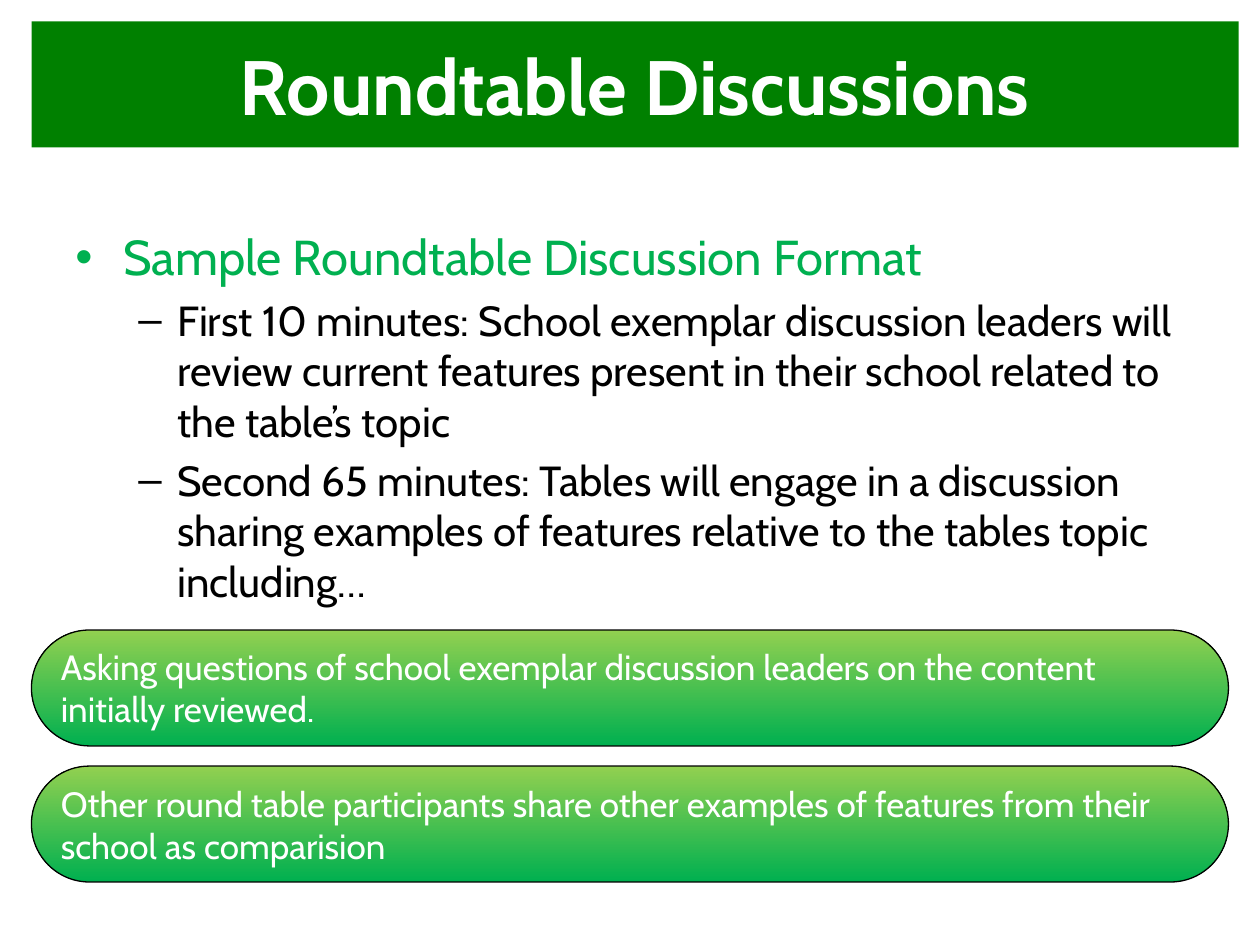
from dataclasses import dataclass

from lxml.etree import SubElement
from pptx import Presentation
from pptx.dml.color import RGBColor
from pptx.enum.shapes import MSO_SHAPE as Preset
from pptx.enum.text import MSO_ANCHOR as Anchor, PP_ALIGN as Align
from pptx.oxml.ns import qn
from pptx.util import Inches, Pt

WHITE = RGBColor(0xFF, 0xFF, 0xFF)
BLACK = RGBColor(0x00, 0x00, 0x00)
BANNER_GREEN = RGBColor(0x00, 0x80, 0x00)
GREEN = RGBColor(0x00, 0xB0, 0x50)
LIME = RGBColor(0x92, 0xD0, 0x50)

TITLE = {"name": "Cabin", "size": Pt(44), "bold": True}
HEADING = {"name": "Cabin", "size": Pt(28)}
DETAIL = {"name": "Cabin", "size": Pt(24)}
PROMPT = {"name": "Cabin", "size": Pt(20)}


@dataclass
class Bullet:
    text: str
    symbol: str
    level: int
    margin: float
    hanging: float
    style: dict
    color: RGBColor


def detail(text: str) -> Bullet:
    return Bullet(text, "–", 1, 0.81, 0.31, DETAIL, BLACK)


BULLETS = [
    Bullet("Sample Roundtable Discussion Format", "•", 0, 0.38, 0.38, HEADING, GREEN),
    detail("First 10 minutes: School exemplar discussion leaders will review current "
           "features present in their school related to the table’s topic"),
    detail("Second 65 minutes: Tables will engage in a discussion sharing examples of "
           "features relative to the tables topic including…"),
]
PROMPTS = [
    "Asking questions of school exemplar discussion leaders on the content initially reviewed.",
    "Other round table participants share other examples of features from their school "
    "as comparision",
]
PROMPT_TOP, PROMPT_STEP = 5, 1.08


def write(para, text: str, style: dict, color: RGBColor) -> None:
    span = para.add_run()
    span.text = text
    for key, value in style.items():
        setattr(span.font, key, value)
    span.font.color.rgb = color


def add_panel(page, preset: Preset, left: float, top: float, width: float,
              height: float, text: str, style: dict, align: Align):
    panel = page.shapes.add_shape(
        preset, Inches(left), Inches(top), Inches(width), Inches(height))
    panel.shadow.inherit = False
    frame = panel.text_frame
    frame.word_wrap = True
    frame.vertical_anchor = Anchor.MIDDLE
    para = frame.paragraphs[0]
    para.alignment = align
    write(para, text, style, WHITE)
    return panel


def add_banner(page, text: str) -> None:
    banner = add_panel(page, Preset.RECTANGLE, 0.25, 0.17, 9.58, 1,
                       text, TITLE, Align.CENTER)
    banner.fill.solid()
    banner.fill.fore_color.rgb = BANNER_GREEN
    banner.line.fill.background()


def add_prompt(page, top: float, text: str) -> None:
    pill = add_panel(page, Preset.ROUNDED_RECTANGLE, 0.25, top, 9.5, 0.92,
                     text, PROMPT, Align.LEFT)
    pill.adjustments[0] = 0.5
    pill.fill.gradient()
    pill.fill.gradient_angle = 90
    for stop, color, position in zip(pill.fill.gradient_stops, (GREEN, LIME), (0, 1)):
        stop.color.rgb = color
        stop.position = position
    pill.line.color.rgb = BLACK
    pill.line.width = Pt(0.75)


def add_bullets(page, bullets: list[Bullet]) -> None:
    box = page.shapes.add_textbox(Inches(0.5), Inches(1.75), Inches(9), Inches(4.95))
    frame = box.text_frame
    frame.word_wrap = True
    for index, bullet in enumerate(bullets):
        para = frame.add_paragraph() if index else frame.paragraphs[0]
        para.level = bullet.level
        para.space_before = Pt(5 if index else 0)
        properties = para._p.get_or_add_pPr()
        properties.set("marL", str(Inches(bullet.margin)))
        properties.set("indent", str(-Inches(bullet.hanging)))
        SubElement(properties, qn("a:buFont"), typeface="Arial")
        SubElement(properties, qn("a:buChar"), char=bullet.symbol)
        write(para, bullet.text, bullet.style, bullet.color)


def main() -> None:
    deck = Presentation()
    deck.slide_width, deck.slide_height = Inches(10), Inches(7.5)
    page = deck.slides.add_slide(deck.slide_layouts[6])
    add_bullets(page, BULLETS)
    add_banner(page, "Roundtable Discussions")
    for index, text in enumerate(PROMPTS):
        add_prompt(page, PROMPT_TOP + index * PROMPT_STEP, text)
    deck.save("out.pptx")


if __name__ == "__main__":
    main()
